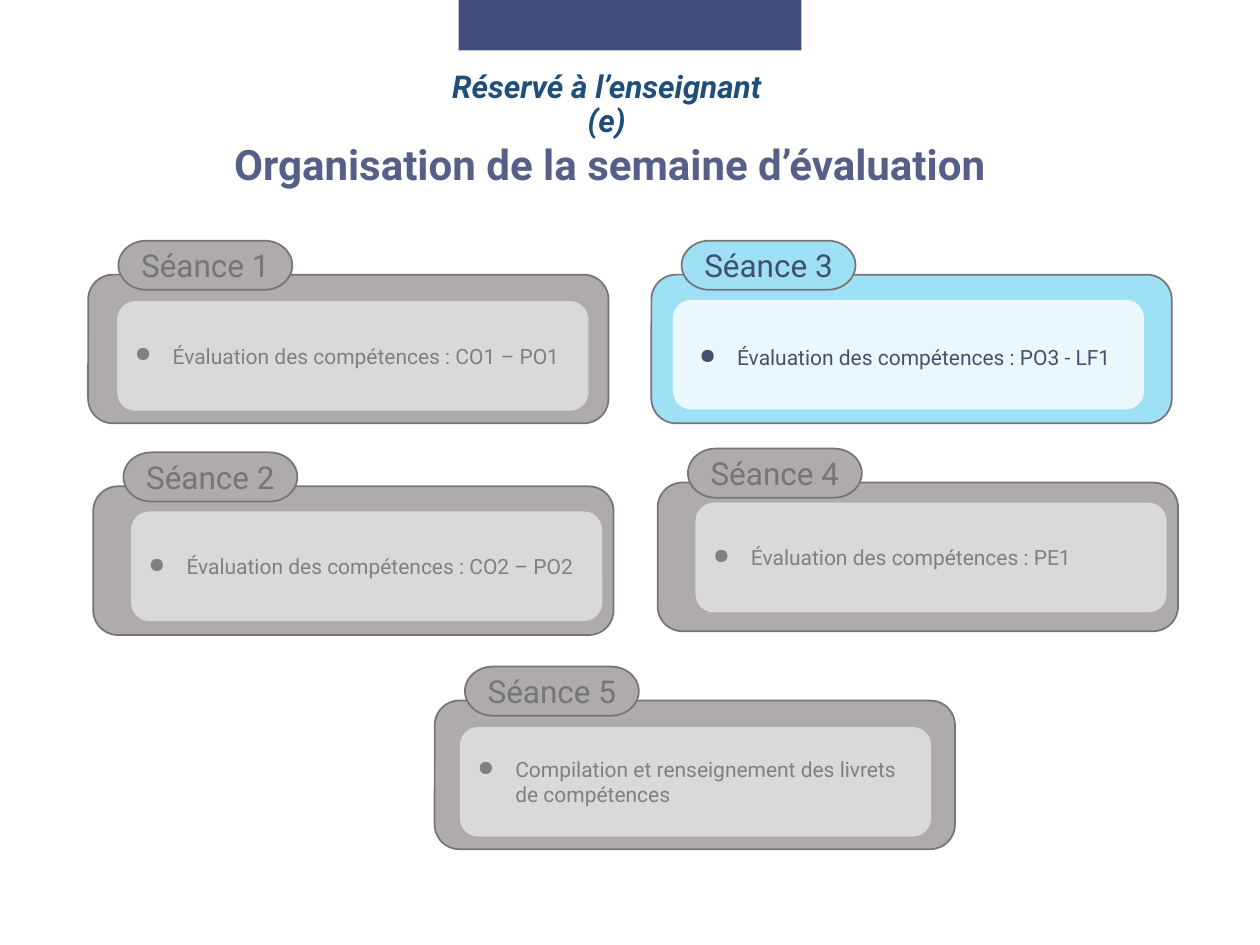
from lxml.etree import SubElement
from pptx import Presentation
from pptx.dml.color import RGBColor
from pptx.enum.shapes import MSO_SHAPE
from pptx.enum.text import MSO_ANCHOR, PP_ALIGN
from pptx.oxml.ns import qn
from pptx.util import Inches, Pt

# Grid of 100 columns by 75 rows over the slide
SLIDE_W, SLIDE_H = Inches(10), Inches(7.5)
COLUMNS, ROWS = 100, 75

# Sizes in columns and rows
CARD = (41.3, 11.8)
TAB = (13.8, 3.9)
PANEL = (37.4, 8.7)
TAB_OFFSET = (2.4, -2.7)

MUTED = {"card": "AFABAB", "tab": "757575", "panel": "D9D9D9", "body": "808080"}
ACTIVE = {"card": "9EE0F4", "tab": "424D7B", "panel": "EAF8FE", "body": "474F71"}
OUTLINE = "757575"

# Label, body, card corner, panel offset, body offset in the panel, palette
SESSIONS = [
    ("Séance 2", "Évaluation des compétences : CO2 – PO2", (7.4, 38.6), (3, 2), None, MUTED),
    ("Séance 1", "Évaluation des compétences : CO1 – PO1", (7, 21.8), (2.3, 2.1), None, MUTED),
    ("Séance 4", "Évaluation des compétences : PE1", (52.2, 38.3), (3, 1.6), None, MUTED),
    ("Séance 5", "Compilation et renseignement des livrets de compétences",
     (34.5, 55.6), (2, 2.1), None, MUTED),
    ("Séance 3", "Évaluation des compétences : PO3 - LF1",
     (51.7, 21.8), (1.7, 2), (0.7, 0.2), ACTIVE),
]


def color(hex_value):
    return RGBColor.from_string(hex_value)


def place(corner, size):
    """Turn columns and rows into left, top, width and height."""
    (x, y), (w, h) = corner, size
    return [int(SLIDE_W * x / COLUMNS), int(SLIDE_H * y / ROWS),
            int(SLIDE_W * w / COLUMNS), int(SLIDE_H * h / ROWS)]


def shift(corner, offset):
    return corner[0] + offset[0], corner[1] + offset[1]


def write(frame, text, ink, align=PP_ALIGN.CENTER, bullet=False,
          anchor=MSO_ANCHOR.MIDDLE, spacing=None, **font_format):
    frame.word_wrap = True
    frame.vertical_anchor = anchor
    paragraph = frame.paragraphs[0]
    paragraph.text = text
    paragraph.alignment = align
    if spacing:
        paragraph.line_spacing = spacing
    if bullet:
        properties = paragraph._p.get_or_add_pPr()
        properties.set("marL", str(Inches(0.3)))
        properties.set("indent", str(-Inches(0.3)))
        SubElement(properties, qn("a:buChar")).set("char", "●")
    font = paragraph.runs[0].font
    for key, value in {"name": "Roboto", **font_format}.items():
        setattr(font, key, value)
    font.color.rgb = color(ink)


def add_block(slide, preset, box, fill=None, outline=None):
    block = slide.shapes.add_shape(preset, *box)
    block.shadow.inherit = False
    if fill:
        block.fill.solid()
        block.fill.fore_color.rgb = color(fill)
    else:
        block.fill.background()
    if outline:
        block.line.color.rgb = color(outline)
        block.line.width = Pt(1)
    else:
        block.line.fill.background()
    return block


def add_header(slide):
    # Title
    title = slide.shapes.title
    title.left, title.top, title.width, title.height = place((5.7, 9.3), (86.2, 7.9))
    write(title.text_frame, "Organisation de la semaine d’évaluation ", "565F88",
          spacing=0.9, size=Pt(24), bold=True)

    # Top band and teacher notice
    add_block(slide, MSO_SHAPE.RECTANGLE, place((36.4, 0), (27.2, 4)), "424D7B")
    notice = slide.shapes.add_textbox(*place((33.6, 5.2), (29.1, 6.7)))
    write(notice.text_frame, "Réservé à l’enseignant (e)", "1F4E79",
          anchor=MSO_ANCHOR.TOP, spacing=0.9, size=Pt(18), bold=True, italic=True)


def add_session(slide, label, body, corner, panel_offset, body_offset, palette):
    # Card and its label tab
    add_block(slide, MSO_SHAPE.ROUNDED_RECTANGLE, place(corner, CARD),
              palette["card"], OUTLINE)
    tab = add_block(slide, MSO_SHAPE.FLOWCHART_TERMINATOR,
                    place(shift(corner, TAB_OFFSET), TAB), palette["card"], OUTLINE)
    write(tab.text_frame, label, palette["tab"], size=Pt(18))

    # Inner panel, with the body in it or in a shifted clear block
    panel_corner = shift(corner, panel_offset)
    holder = add_block(slide, MSO_SHAPE.ROUNDED_RECTANGLE,
                       place(panel_corner, PANEL), palette["panel"])
    if body_offset:
        holder = add_block(slide, MSO_SHAPE.ROUNDED_RECTANGLE,
                           place(shift(panel_corner, body_offset), PANEL))
    write(holder.text_frame, body, palette["body"], align=PP_ALIGN.LEFT,
          bullet=True, size=Pt(12))


def main():
    deck = Presentation()
    deck.slide_width, deck.slide_height = SLIDE_W, SLIDE_H
    slide = deck.slides.add_slide(deck.slide_layouts[5])
    add_header(slide)
    for session in SESSIONS:
        add_session(slide, *session)
    deck.save("out.pptx")


if __name__ == "__main__":
    main()
